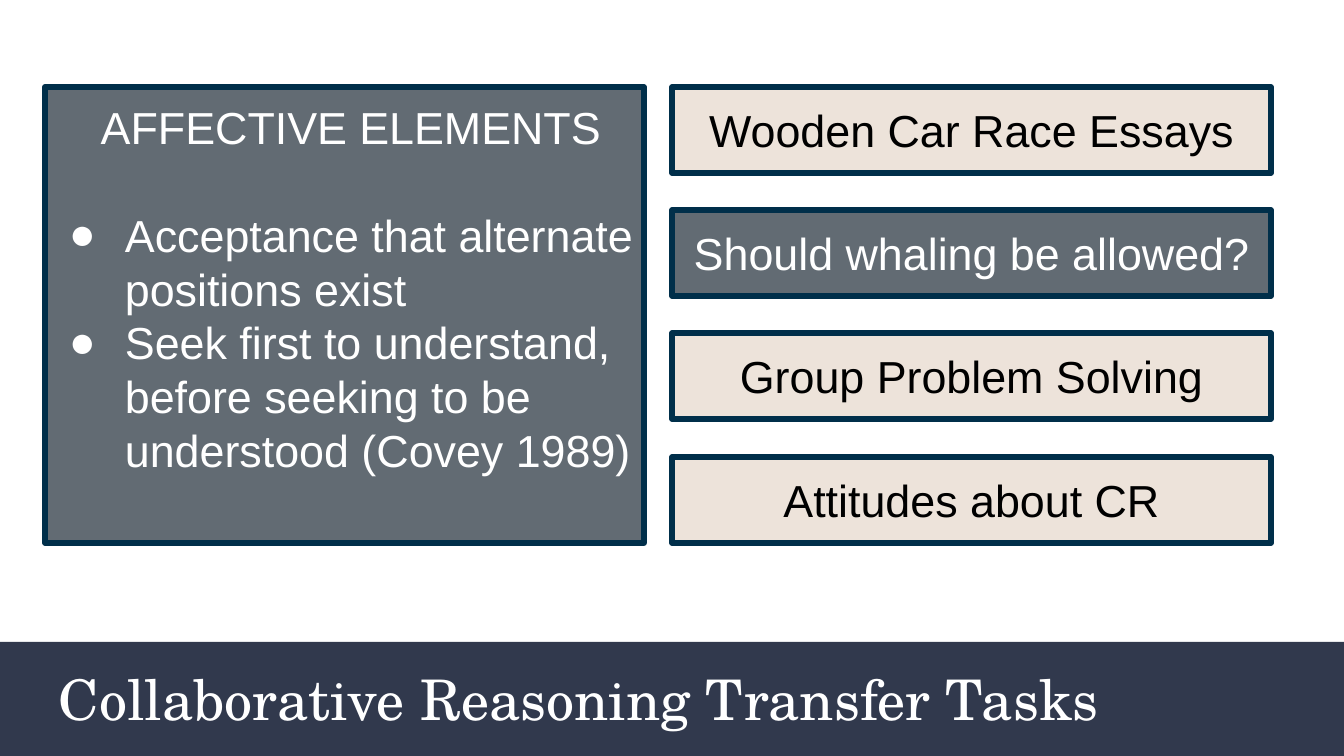
import pptx
import pptx.util
import pptx.dml.color
import pptx.enum.shapes
import pptx.enum.text
import lxml.etree

SCALE = 914400 / 134.4
WHITE, BLACK, NAVY = "FFFFFF", "000000", "002F4A"
SLATE, CREAM, BAND = "626B73", "EDE3DA", "31394D"
MID = pptx.enum.text.MSO_ANCHOR.MIDDLE
TOP = pptx.enum.text.MSO_ANCHOR.TOP
LEFT = pptx.enum.text.PP_ALIGN.LEFT
CENTER = pptx.enum.text.PP_ALIGN.CENTER


def px(n):
    return pptx.util.Emu(round(n * SCALE))


def color(code):
    return pptx.dml.color.RGBColor.from_string(code)


deck = pptx.Presentation()
deck.slide_width, deck.slide_height = px(1344), px(756)
slide = deck.slides.add_slide(deck.slide_layouts[6])

# Boxes: left, top, width, height, fill, border, anchor
tasks = [
    ("Wooden Car Race Essays", CREAM, BLACK),
    ("Should whaling be allowed?", SLATE, WHITE),
    ("Group Problem Solving", CREAM, BLACK),
    ("Attitudes about CR", CREAM, BLACK),
]
boxes = [(0, 642, 1344, 114, BAND, None, MID)]
for i, (text, fill, ink) in enumerate(tasks):
    boxes.append((672, 87 + i * 370 // 3, 599, 86, fill, NAVY, MID))
boxes.append((45, 87, 599, 456, SLATE, NAVY, TOP))

frames = []
for left, top, width, height, fill, border, anchor in boxes:
    box = slide.shapes.add_shape(
        pptx.enum.shapes.MSO_SHAPE.RECTANGLE,
        px(left), px(top), px(width), px(height))
    box.shadow.inherit = False
    box.fill.solid()
    box.fill.fore_color.rgb = color(fill)
    if border:
        box.line.color.rgb = color(border)
        box.line.width = pptx.util.Pt(3)
    else:
        box.line.fill.background()
    box.text_frame.vertical_anchor = anchor
    frames.append(box.text_frame)

title = slide.shapes.add_textbox(
    px(46), px(665), px(1173), px(67)).text_frame
title.vertical_anchor = MID

for frame in frames + [title]:
    frame.word_wrap = True
    frame.margin_left = frame.margin_right = px(13)
    frame.margin_top = frame.margin_bottom = px(13)

panel = frames[-1]
panel.margin_right = 0
points = [
    "Acceptance that alternate positions exist",
    "Seek first to understand, before seeking to be understood (Covey 1989)",
]

# Lines of text: frame, text, font, size, ink, align
lines = [(title, "Collaborative Reasoning Transfer Tasks",
          "TeX Gyre Schola", 30, WHITE, LEFT)]
for frame, (text, fill, ink) in zip(frames[1:], tasks):
    lines.append((frame, text, "Arial", 24, ink, CENTER))
lines.append((panel, "AFFECTIVE ELEMENTS", "Arial", 24, WHITE, CENTER))
for text in points:
    lines.append((panel, text, "Arial", 24, WHITE, LEFT))

for frame, text, font, size, ink, align in lines:
    para = frame.paragraphs[0]
    if para.runs:
        para = frame.add_paragraph()
    para.alignment = align
    run = para.add_run()
    run.text = text
    run.font.name = font
    run.font.size = pptx.util.Pt(size)
    run.font.color.rgb = color(ink)

for para in panel.paragraphs:
    para.line_spacing = pptx.util.Pt(28.8)
panel.paragraphs[0].space_after = pptx.util.Pt(28.8)

space = "{http://schemas.openxmlformats.org/drawingml/2006/main}"
for para in panel.paragraphs[1:]:
    props = para._p.get_or_add_pPr()
    props.set("marL", str(px(67)))
    props.set("indent", str(px(-56)))
    tint = lxml.etree.SubElement(props, space + "buClr")
    lxml.etree.SubElement(tint, space + "srgbClr", val=WHITE)
    lxml.etree.SubElement(props, space + "buFont", typeface="Arial")
    lxml.etree.SubElement(props, space + "buChar", char="●")

deck.save("out.pptx")
